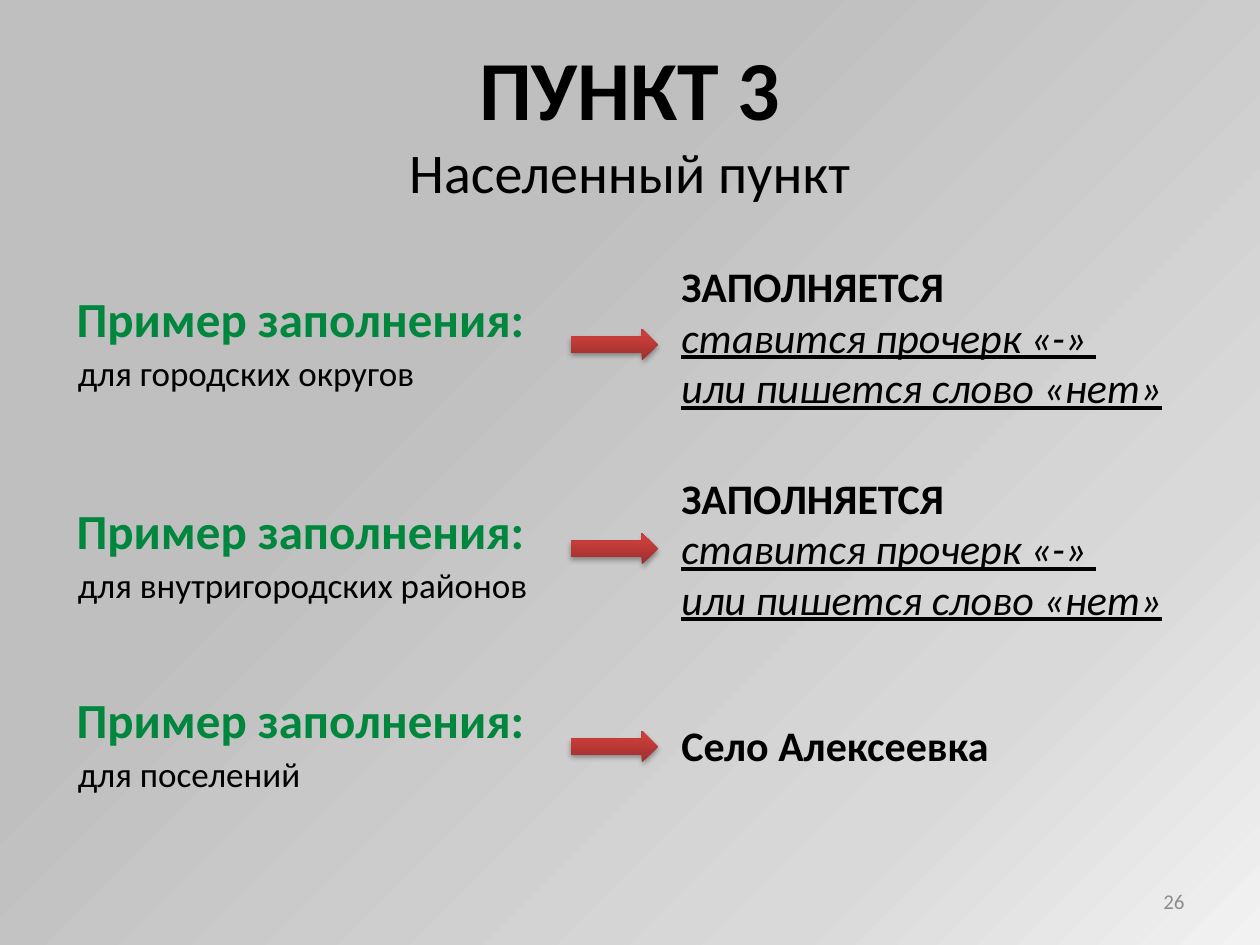
from dataclasses import dataclass

from pptx import Presentation
from pptx.dml.color import RGBColor
from pptx.enum import shapes, text
from pptx.oxml import parse_xml
from pptx.oxml.ns import nsdecls
from pptx.util import Inches, Pt


@dataclass(frozen=True)
class Theme:
    """Colours, type sizes and font of the slide."""
    font: str = "Calibri"
    ink: str = "000000"
    green: str = "00863D"
    grey: str = "8C8C8C"
    back: tuple = ((0, "F2F2F2"), (22, "D9D9D9"), (65, "BFBFBF"))
    red: tuple = ((0, "9C2F2D"), (80, "CB3E3A"), (100, "CE3B37"))
    title: int = 48
    topic: int = 32
    head: int = 28
    value: int = 24
    note: int = 20
    page: int = 12


THEME = Theme()
LEFT, MID, RIGHT = text.PP_ALIGN.LEFT, text.PP_ALIGN.CENTER, text.PP_ALIGN.RIGHT


def line(words, size, color=THEME.ink, bold=False, slant=False):
    """Describe one paragraph; slanted ones are underlined too."""
    return words, size, color, bold, slant


def grad(stops, way):
    """Return the XML of a gradient fill."""
    marks = "".join(
        f'<a:gs pos="{pos * 1000}"><a:srgbClr val="{color}"/></a:gs>'
        for pos, color in stops)
    return (f'<a:gradFill {nsdecls("a")} rotWithShape="1">'
            f'<a:gsLst>{marks}</a:gsLst>{way}</a:gradFill>')


def paint(slide):
    """Fill the background with a glow from the lower right corner."""
    way = ('<a:path path="circle"><a:fillToRect l="100000" t="100000"/>'
           '</a:path>')
    slide.element.cSld.insert(0, parse_xml(
        f'<p:bg {nsdecls("p", "a")}><p:bgPr>{grad(THEME.back, way)}'
        '<a:effectLst/></p:bgPr></p:bg>'))


def label(slide, place, lines, align=LEFT, wrap=True, middle=False):
    """Add a text box with one paragraph for each line."""
    box = slide.shapes.add_textbox(*map(Inches, place))
    frame = box.text_frame
    frame.word_wrap = wrap
    if middle:
        frame.vertical_anchor = text.MSO_ANCHOR.MIDDLE
    else:
        frame.auto_size = text.MSO_AUTO_SIZE.SHAPE_TO_FIT_TEXT
    for index, (words, size, color, bold, slant) in enumerate(lines):
        para = frame.add_paragraph() if index else frame.paragraphs[0]
        para.text = words
        para.alignment = align
        font = para.font
        font.name, font.size = THEME.font, Pt(size)
        font.bold, font.italic, font.underline = bold, slant, slant
        font.color.rgb = RGBColor.from_string(color)


def arrow(slide, top):
    """Add a red arrow with a soft shadow."""
    shape = slide.shapes.add_shape(
        shapes.MSO_SHAPE.RIGHT_ARROW,
        *map(Inches, (4.53, top, 0.69, 0.25)))
    shape.line.fill.background()
    shape.shadow.inherit = False
    props = shape.element.spPr
    props.insert(2, parse_xml(grad(THEME.red, '<a:lin ang="16200000"/>')))
    props[-1].append(parse_xml(
        f'<a:outerShdw {nsdecls("a")} blurRad="{Pt(3.1)}" dist="{Pt(1.8)}" '
        'dir="5400000" rotWithShape="0"><a:srgbClr val="000000">'
        '<a:alpha val="35000"/></a:srgbClr></a:outerShdw>'))


def sample(slide, top, note, dart, side, tall, lines):
    """Add a row: heading and note, arrow, and the value to enter."""
    label(slide, (0.51, top, 3.79, 0.57),
          [line("Пример заполнения:", THEME.head, THEME.green, True)],
          wrap=False)
    label(slide, (0.52, top + 0.5, 4.01, 0.44), [line(note, THEME.note)])
    label(slide, (5.31, side, 4.38, tall), lines)
    arrow(slide, dart)


def main():
    """Build and save the slide."""
    deck = Presentation()
    deck.slide_width, deck.slide_height = Inches(10), Inches(7.5)
    slide = deck.slides.add_slide(deck.slide_layouts[6])
    paint(slide)
    label(slide, (0, 0.24, 10, 1.45),
          [line("ПУНКТ 3", THEME.title, bold=True),
           line("Населенный пункт", THEME.topic)], MID)
    dash = [line("ЗАПОЛНЯЕТСЯ", THEME.value, bold=True),
            line("ставится прочерк «-» ", THEME.value, slant=True),
            line("или пишется слово «нет»", THEME.value, slant=True)]
    town = [line("Село Алексеевка", THEME.value, bold=True)]
    rows = [(2.24, "для городских округов", 2.61, 2.02, 1.31, dash),
            (3.92, "для внутригородских районов", 4.23, 3.7, 1.31, dash),
            (5.42, "для поселений", 5.8, 5.66, 0.5, town)]
    for row in rows:
        sample(slide, *row)
    label(slide, (7.17, 6.95, 2.33, 0.4),
          [line("26", THEME.page, THEME.grey)], RIGHT, middle=True)
    deck.save("out.pptx")


if __name__ == "__main__":
    main()
